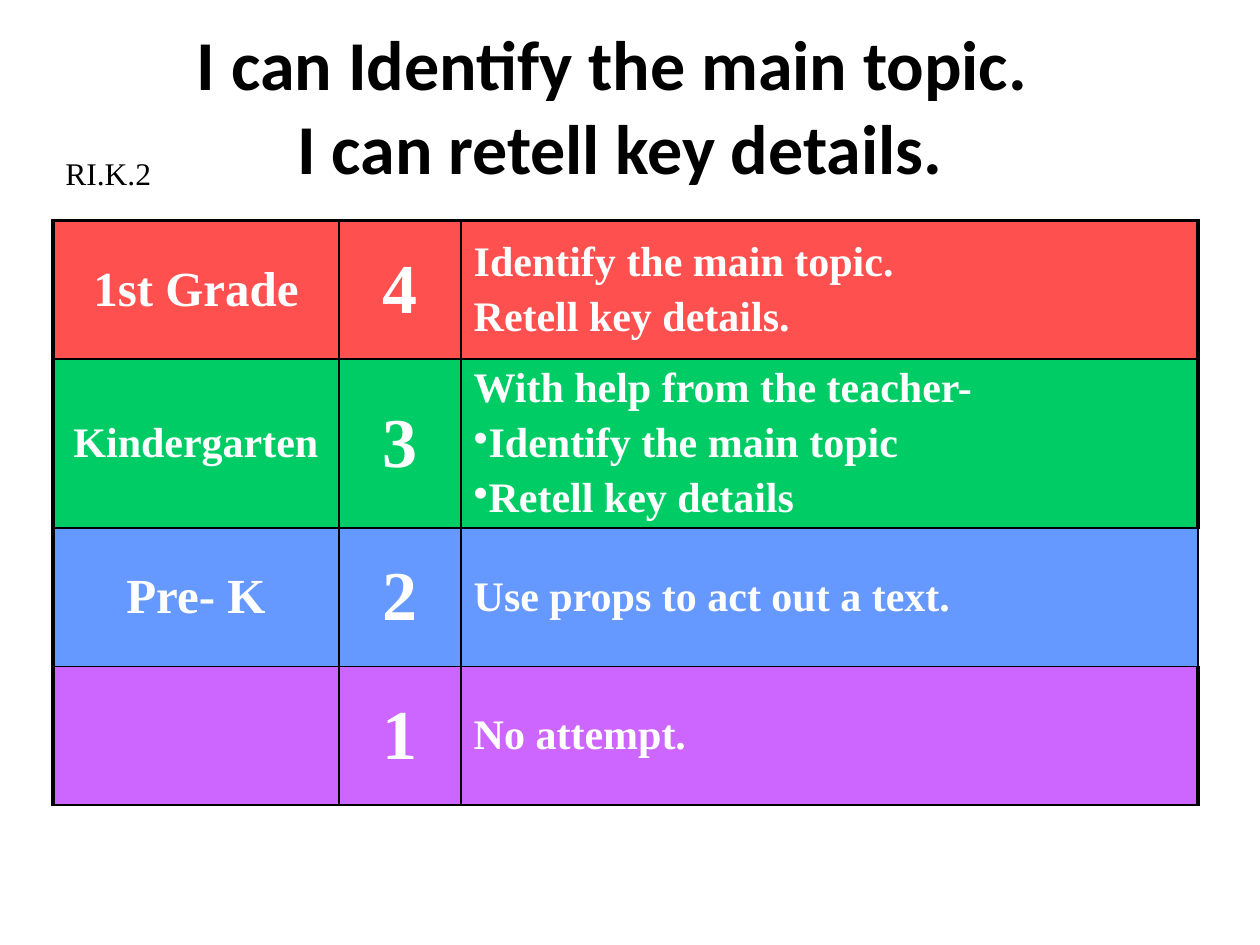
from dataclasses import dataclass

from lxml.etree import SubElement
from pptx import Presentation
from pptx.dml.color import RGBColor as RGB
from pptx.enum.text import MSO_ANCHOR as Anchor, MSO_AUTO_SIZE as AutoSize, PP_ALIGN as Align
from pptx.oxml.ns import qn
from pptx.util import Inches, Pt


@dataclass(frozen=True)
class Theme:
    heading: str = "Calibri"
    body: str = "Times New Roman"
    ink: str = "000000"
    paper: str = "FFFFFF"
    title_pt: int = 40
    score_pt: int = 40
    grade_pt: int = 28
    detail_pt: int = 24
    code_pt: int = 18


@dataclass(frozen=True)
class Level:
    grade: str
    score: str
    details: tuple[str, ...]
    fill: str
    height: float
    rules: tuple[float, float]  # top and bottom, points
    sides: tuple[float, float, float, float] = (2.25, 1, 1, 2.25)  # left to right
    grade_pt: int = 28


THEME = Theme()
BULLET = "•"
COLUMNS = (2.27, 0.97, 5.85)
LEVELS = (
    Level("1st Grade", "4", ("Identify the main topic.", "Retell key details."),
          "FF5050", 1.1, (2.25, 1.5)),
    Level("Kindergarten", "3",
          ("With help from the teacher-", "•Identify the main topic", "•Retell key details"),
          "00CC66", 1.27, (1.5, 1), grade_pt=THEME.detail_pt),
    Level("Pre- K", "2", ("Use props to act out a text.",),
          "6699FF", 1.1, (1, 1), sides=(2.25, 1.5, 1.5, 1.5)),
    Level("", "1", ("No attempt.",), "CC66FF", 1.1, (1, 1.5)),
)


def place(prs, sp, x: float, y: float, w: float, h: float) -> None:
    """Position a shape by shares of the slide's width and height."""
    box = {"left": x * prs.slide_width, "top": y * prs.slide_height,
           "width": w * prs.slide_width, "height": h * prs.slide_height}
    for name, value in box.items():
        setattr(sp, name, round(value))


def style(font, face: str, size: int, color: str, bold: bool) -> None:
    for name, value in {"name": face, "size": Pt(size), "bold": bold}.items():
        setattr(font, name, value)
    font.color.rgb = RGB.from_string(color)


def format_paragraph(p, bulleted: bool) -> None:
    """Add the proportional space before, and a bullet where wanted."""
    pPr = p._p.get_or_add_pPr()
    SubElement(SubElement(pPr, qn("a:spcBef")), qn("a:spcPct"), val="20000")
    if bulleted:
        SubElement(pPr, qn("a:buChar"), char=BULLET)


def draw_borders(cell, left: float, right: float, top: float, bottom: float) -> None:
    tcPr = cell._tc.get_or_add_tcPr()
    for side, width in zip("LRTB", (left, right, top, bottom)):
        ln = SubElement(tcPr, qn(f"a:ln{side}"), w=str(Pt(width)))
        SubElement(SubElement(ln, qn("a:solidFill")), qn("a:srgbClr"), val=THEME.ink)


def fill_cell(cell, lines: tuple[str, ...], size: int, align: Align, color: str) -> None:
    cell.vertical_anchor = Anchor.MIDDLE
    cell.fill.solid()
    cell.fill.fore_color.rgb = RGB.from_string(color)
    tf = cell.text_frame
    for i, line in enumerate(lines):
        p = tf.add_paragraph() if i else tf.paragraphs[0]
        p.alignment = align
        format_paragraph(p, line.startswith(BULLET))
        if line:
            r = p.add_run()
            r.text = line.removeprefix(BULLET)
            style(r.font, THEME.body, size, THEME.paper, True)


def add_title(prs, slide) -> None:
    sp = slide.shapes.title
    place(prs, sp, 0.067, 0.044, 0.85, 0.133)
    tf = sp.text_frame
    tf.text = "I can Identify the main topic. \vI can retell key details."
    for name, value in {"auto_size": AutoSize.NONE, "word_wrap": True,
                        "vertical_anchor": Anchor.MIDDLE}.items():
        setattr(tf, name, value)
    p = tf.paragraphs[0]
    p.alignment = Align.CENTER
    for r in p.runs:
        style(r.font, THEME.heading, THEME.title_pt, THEME.ink, True)


def add_rubric(slide) -> None:
    height = sum(level.height for level in LEVELS)
    table = slide.shapes.add_table(
        len(LEVELS), len(COLUMNS), Inches(0.42), Inches(1.75),
        Inches(sum(COLUMNS)), Inches(height)).table
    table.first_row = table.horz_banding = False
    for column, width in zip(table.columns, COLUMNS):
        column.width = Inches(width)
    for row, level in zip(table.rows, LEVELS):
        row.height = Inches(level.height)
        contents = (
            ((level.grade,), level.grade_pt, Align.CENTER),
            ((level.score,), THEME.score_pt, Align.CENTER),
            (level.details, THEME.detail_pt, Align.LEFT),
        )
        for i, (cell, content) in enumerate(zip(row.cells, contents)):
            draw_borders(cell, level.sides[i], level.sides[i + 1], *level.rules)
            fill_cell(cell, *content, level.fill)


def add_standard_code(prs, slide) -> None:
    sp = slide.shapes.add_textbox(0, 0, 0, 0)
    place(prs, sp, 0.042, 0.156, 0.142, 0.053)
    tf = sp.text_frame
    tf.word_wrap = True
    tf.auto_size = AutoSize.SHAPE_TO_FIT_TEXT
    r = tf.paragraphs[0].add_run()
    r.text = "RI.K.2"
    style(r.font, THEME.body, THEME.code_pt, THEME.ink, False)


def main() -> None:
    prs = Presentation()
    prs.slide_width, prs.slide_height = Inches(10), Inches(7.5)
    slide = prs.slides.add_slide(prs.slide_layouts[5])
    add_title(prs, slide)
    add_rubric(slide)
    add_standard_code(prs, slide)
    prs.save("out.pptx")


if __name__ == "__main__":
    main()
